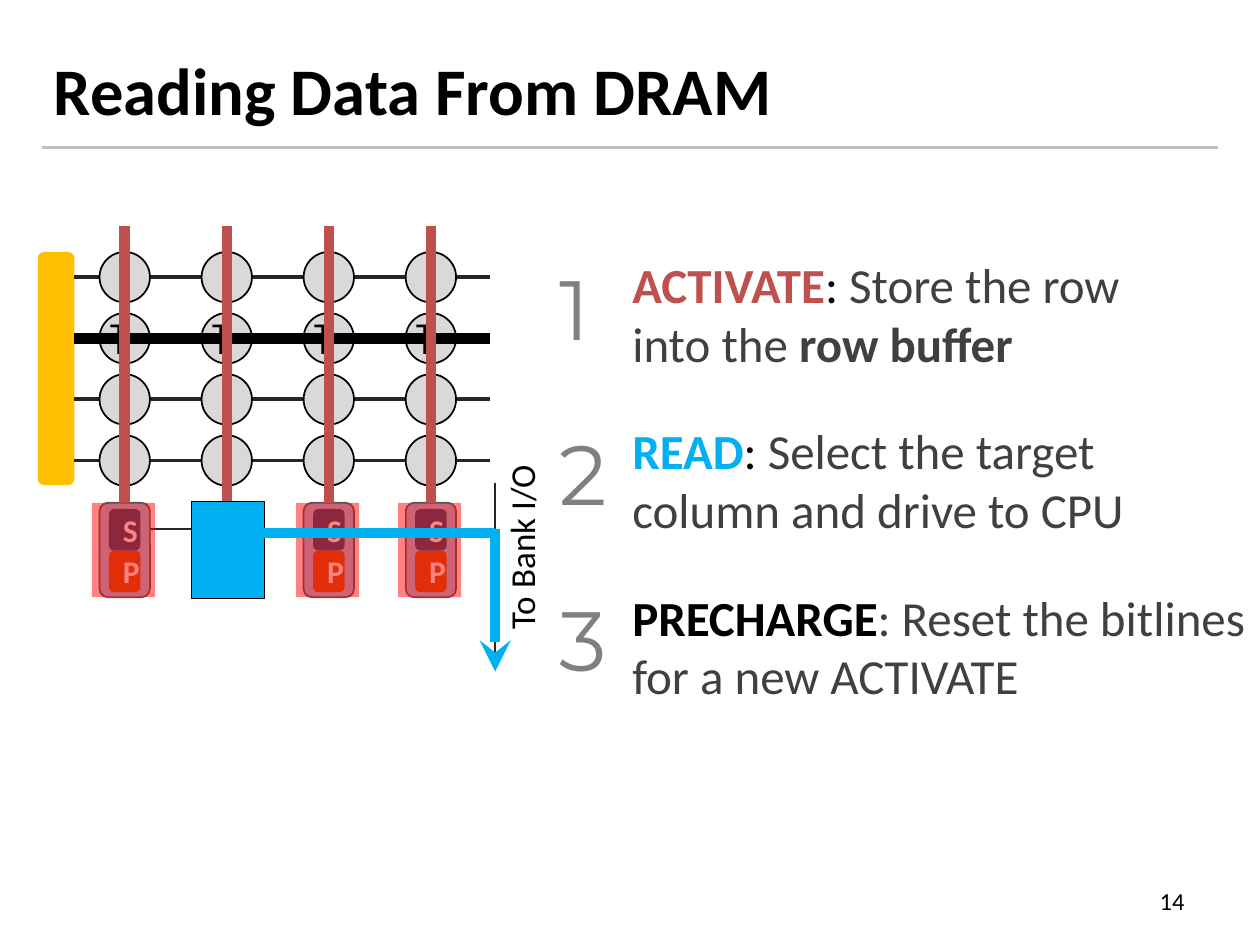
import dataclasses

import lxml.etree
import pptx
import pptx.dml.color
import pptx.enum.shapes
import pptx.enum.text
import pptx.oxml.ns
import pptx.util

SHAPE = pptx.enum.shapes.MSO_SHAPE
ALIGN = pptx.enum.text.PP_ALIGN
ANCHOR = pptx.enum.text.MSO_ANCHOR
AUTO = pptx.enum.text.MSO_AUTO_SIZE
qn = pptx.oxml.ns.qn


@dataclasses.dataclass(frozen=True)
class Theme:
    body: str = "Calibri"
    digits: str = "Montserrat"
    black: str = "000000"
    white: str = "FFFFFF"
    wire: str = "262626"
    text: str = "404040"
    rule: str = "BFBFBF"
    number: str = "808080"
    activate: str = "C0504D"
    read: str = "00B0F0"
    decoder: str = "FFC000"
    cell: str = "D9D9D9"
    buffer: str = "9DC3E6"
    buffer_edge: str = "595959"
    sense: str = "1F4E79"
    precharge: str = "C55A11"
    overlay: str = "FF0000"
    title_size: float = 38
    step_size: float = 28
    number_size: float = 48
    bit_size: float = 24
    io_size: float = 20
    amp_size: float = 18
    page_size: float = 14
    thin: float = 1
    rule_width: float = 1.5
    medium: float = 2.25
    thick: float = 6


T = Theme()
WIDTH, HEIGHT = 10, 7.5
COLS = ROWS = 4
CELL = 0.4
BITLINE_TOP, BUFFER_TOP, BUFFER_H = 1.79, 3.99, 0.75
WORDLINE_LEFT, WORDLINE_RIGHT = 0.59, 3.89
BUS_X, BUS_Y = 3.93, 4.2
ACTIVE_ROW, READ_COL = 1, 1


def col_x(col):
    return 0.99 + 0.81 * col


def row_y(row):
    return 2.2 + 0.485 * row


def inches(*values):
    return [pptx.util.Inches(v) for v in values]


def rgb(color):
    return pptx.dml.color.RGBColor.from_string(color)


def style_font(font, size, color, name=T.body, bold=False):
    font.size, font.name, font.bold = pptx.util.Pt(size), name, bold
    font.color.rgb = rgb(color)


def add_block(shapes, kind, box, fill, edge=None, alpha=None):
    sp = shapes.add_shape(kind, *inches(*box))
    sp.shadow.inherit = False
    sp.fill.solid()
    sp.fill.fore_color.rgb = rgb(fill)
    if alpha:
        clr = sp.fill._xPr.find(qn("a:solidFill"))[0]
        lxml.etree.SubElement(clr, qn("a:alpha"), val=str(alpha * 1000))
    if edge:
        sp.line.color.rgb = rgb(edge)
        sp.line.width = pptx.util.Pt(T.thin)
    else:
        sp.line.fill.background()
    return sp


def add_line(shapes, start, end, color, width, head=None):
    straight = pptx.enum.shapes.MSO_CONNECTOR.STRAIGHT
    line = shapes.add_connector(straight, *inches(*start, *end))
    line.line.color.rgb = rgb(color)
    line.line.width = pptx.util.Pt(width)
    if head:
        lxml.etree.SubElement(line.line._get_or_add_ln(), qn("a:headEnd"), type=head)
    lxml.etree.SubElement(line._element.spPr, qn("a:effectLst"))
    return line


def add_label(shapes, box, text, size, color=T.black, name=T.body, bold=False,
              align=None, anchor=ANCHOR.TOP, wrap=True):
    tb = shapes.add_textbox(*inches(*box))
    tf = tb.text_frame
    tf.word_wrap, tf.vertical_anchor = wrap, anchor
    tf.auto_size = AUTO.SHAPE_TO_FIT_TEXT if anchor == ANCHOR.TOP else AUTO.NONE
    p = tf.paragraphs[0]
    p.text, p.alignment = text, align
    style_font(p.font, size, color, name, bold)
    return tb


def add_step(shapes, index, width, runs, wrap=False):
    tb = add_label(shapes, (4.92, 1.97 + 1.32 * index, width, 1.04), "", T.step_size, wrap=wrap)
    p = tb.text_frame.paragraphs[0]
    for text, color, bold in runs:
        for i, part in enumerate(text.split("\n")):
            if i:
                p.add_line_break()
            r = p.add_run()
            r.text = part
            style_font(r.font, T.step_size, color, bold=bold)


def add_amp_part(shapes, col, top, letter, fill):
    sp = add_block(shapes, SHAPE.ROUNDED_RECTANGLE, (col_x(col) - 0.125, top, 0.25, 0.33), fill)
    sp.text_frame.vertical_anchor = ANCHOR.MIDDLE
    p = sp.text_frame.paragraphs[0]
    p.text, p.alignment = letter, ALIGN.CENTER
    style_font(p.font, T.amp_size, T.white, bold=True)


def add_bitline(shapes, col, amp, color, width):
    x = col_x(col)
    line = add_line(shapes, (x, BITLINE_TOP), (x, BUFFER_TOP), color, width)
    line.end_connect(amp, 0)


def add_wordline(shapes, row, color, width):
    y = row_y(row)
    add_line(shapes, (WORDLINE_LEFT, y), (WORDLINE_RIGHT, y), color, width)


def add_column(shapes, col):
    left = col_x(col) - CELL / 2
    amp = add_block(shapes, SHAPE.ROUNDED_RECTANGLE, (left, BUFFER_TOP, CELL, BUFFER_H),
                    T.buffer, T.buffer_edge)
    if col != READ_COL:
        add_amp_part(shapes, col, 4.04, "S", T.sense)
        add_amp_part(shapes, col, 4.37, "P", T.precharge)
    add_bitline(shapes, col, amp, T.wire, T.medium)
    for row in range(ROWS):
        add_block(shapes, SHAPE.OVAL, (left, row_y(row) - CELL / 2, CELL, CELL), T.cell, T.black)
    return amp


def add_bus(shapes):
    add_line(shapes, (BUS_X, BUS_Y), (1.09, BUS_Y), T.wire, T.thin)
    add_line(shapes, (BUS_X, 5.31), (BUS_X, 3.83), T.wire, T.thin, "triangle")
    add_label(shapes, (3.28, 4.01, 1.72, 0.44), "To Bank I/O", T.io_size).rotation = 270


def add_array(shapes):
    add_block(shapes, SHAPE.ROUNDED_RECTANGLE, (0.3, 2, 0.29, 1.85), T.decoder)
    for row in range(ROWS):
        add_wordline(shapes, row, T.wire, T.medium)
    return [add_column(shapes, col) for col in range(COLS)]


def add_activation(shapes, amps):
    bits = shapes.add_group_shape().shapes
    for col in range(COLS):
        add_label(bits, (col_x(col) - 0.215, row_y(ACTIVE_ROW) - 0.25, 0.43, 0.5), "1",
                  T.bit_size, name=T.digits, wrap=False)
    add_wordline(shapes, ACTIVE_ROW, T.black, T.thick)
    bitlines = shapes.add_group_shape().shapes
    for col, amp in enumerate(amps):
        add_bitline(bitlines, col, amp, T.activate, T.thick)
    overlays = shapes.add_group_shape().shapes
    for col in range(COLS):
        add_block(overlays, SHAPE.RECTANGLE, (col_x(col) - 0.26, BUFFER_TOP, 0.5, BUFFER_H),
                  T.overlay, alpha=49)


def add_read_path(shapes):
    add_block(shapes, SHAPE.RECTANGLE, (1.52, 3.98, 0.58, 0.77), T.read, T.black)
    add_line(shapes, (BUS_X, 5.33), (BUS_X, BUS_Y), T.read, T.thick, "stealth")
    add_line(shapes, (BUS_X, 4.23), (1.88, 4.23), T.read, T.thick)


def add_steps(shapes):
    add_step(shapes, 0, 4.76, [("ACTIVATE", T.activate, True), (":", T.black, False),
                               (" Store the row \ninto the ", T.text, False),
                               ("row buffer", T.text, True)])
    add_step(shapes, 1, 4.38, [("READ", T.read, True), (": ", T.black, False),
                               ("Select the target \ncolumn and drive to CPU", T.text, False)])
    add_step(shapes, 2, 5.23, [("PRECHARGE", T.black, True),
                               (": Reset the bitlines for a new ACTIVATE", T.text, False)], True)
    for i in range(3):
        add_label(shapes, (4.34, 1.99 + 1.31 * i, 0.65, 0.91), str(i + 1), T.number_size,
                  T.number, T.digits, wrap=False)


def main():
    prs = pptx.Presentation()
    prs.slide_width, prs.slide_height = inches(WIDTH, HEIGHT)
    s = prs.slides.add_slide(prs.slide_layouts[6])
    shapes = s.shapes
    add_line(shapes, (0.33, 1.17), (WIDTH - 0.33, 1.17), T.rule, T.rule_width)
    add_bus(shapes.add_group_shape().shapes)
    add_label(shapes, (0.33, 0.08, 9.33, 1.25), "Reading Data From DRAM", T.title_size,
              bold=True, anchor=ANCHOR.MIDDLE)
    add_label(shapes, (7.17, 6.95, 2.33, 0.4), "14", T.page_size, align=ALIGN.RIGHT,
              anchor=ANCHOR.MIDDLE)
    amps = add_array(shapes.add_group_shape().shapes)
    add_activation(shapes, amps)
    add_read_path(shapes.add_group_shape().shapes)
    add_steps(shapes)
    prs.save("out.pptx")


if __name__ == "__main__":
    main()
